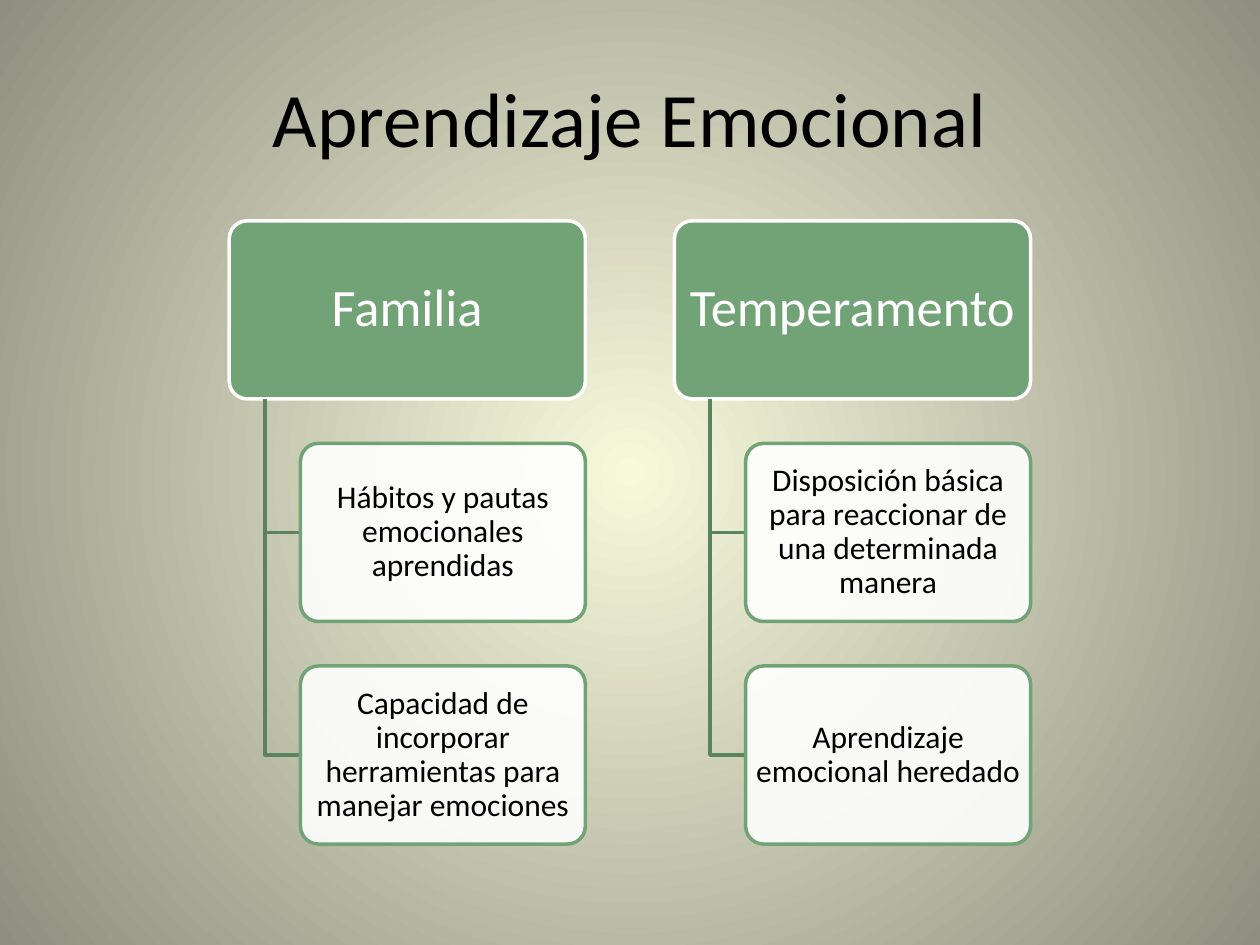
from dataclasses import dataclass

from lxml.etree import SubElement as Sub
from pptx import Presentation
from pptx.dml.color import RGBColor as RGB
from pptx.enum.shapes import MSO_SHAPE as Shape
from pptx.enum.text import MSO_ANCHOR as Anchor, PP_ALIGN as Align
from pptx.oxml.ns import qn
from pptx.util import Pt


@dataclass(frozen=True)
class Theme:
    font: str = "Calibri"
    title: int = 44
    head: int = 30
    body: int = 18
    line: int = 2
    ink: str = "000000"
    white: str = "FFFFFF"
    green: str = "72A376"
    dark: str = "5B835E"
    glow: str = "F7F9DB"
    edge: str = "8E8F80"


class Deck:
    def __init__(self, theme):
        self.theme = theme
        self.prs = Presentation()
        self.prs.slide_width, self.prs.slide_height = Pt(720), Pt(540)
        self.slide = self.prs.slides.add_slide(self.prs.slide_layouts[6])

    def glow(self):
        """Fill the background with a round gradient from the centre."""
        fill = self.slide.background.fill
        fill.gradient()
        tones = (self.theme.glow, self.theme.edge)
        for i, (stop, tone) in enumerate(zip(fill.gradient_stops, tones)):
            stop.position = i
            stop.color.rgb = RGB.from_string(tone)
        lin = self.slide.element.find(".//" + qn("a:lin"))
        grad = lin.getparent()
        grad.remove(lin)
        ring = Sub(grad, qn("a:path"), {"path": "circle"})
        Sub(ring, qn("a:fillToRect"), {side: "50000" for side in "ltrb"})

    def label(self, shape, text, size, color):
        """Set centred text in a shape."""
        frame = shape.text_frame
        frame.text = text
        frame.word_wrap = True
        frame.vertical_anchor = Anchor.MIDDLE
        par = frame.paragraphs[0]
        par.alignment = Align.CENTER
        font = par.runs[0].font
        font.name, font.size = self.theme.font, Pt(size)
        font.color.rgb = RGB.from_string(color)
        return frame

    def stroke(self, shape, color):
        shape.shadow.inherit = False
        shape.line.color.rgb = RGB.from_string(color)
        shape.line.width = Pt(self.theme.line)

    def title(self, text, x, y, w, h):
        box = self.slide.shapes.add_textbox(Pt(x), Pt(y), Pt(w), Pt(h))
        self.label(box, text, self.theme.title, self.theme.ink)

    def card(self, text, x, y, w, h, size, fill, line, ink, alpha=100):
        card = self.slide.shapes.add_shape(
            Shape.ROUNDED_RECTANGLE, Pt(x), Pt(y), Pt(w), Pt(h))
        card.adjustments[0] = 0.1
        card.fill.solid()
        card.fill.fore_color.rgb = RGB.from_string(fill)
        if alpha < 100:
            tone = card.element.spPr.find(".//" + qn("a:srgbClr"))
            Sub(tone, qn("a:alpha"), val=str(alpha * 1000))
        self.stroke(card, line)
        frame = self.label(card, text, size, ink)
        frame.margin_left = frame.margin_right = Pt(0.15 * size)
        frame.margin_top = frame.margin_bottom = Pt(0.1 * size)
        frame.paragraphs[0].line_spacing = 0.9

    def elbow(self, x, y, w, h):
        """Draw a line down, then right."""
        pen = self.slide.shapes.build_freeform(Pt(x), Pt(y))
        pen.add_line_segments(
            [(Pt(x), Pt(y + h)), (Pt(x + w), Pt(y + h))], close=False)
        bend = pen.convert_to_shape()
        bend.fill.background()
        self.stroke(bend, self.theme.dark)

    def branch(self, head, items, x, y, unit):
        """Draw a head card with its items hanging below it."""
        t = self.theme
        wide, high, step = 10 * unit, 5 * unit, 6.25 * unit
        self.card(head, x, y, wide, high, t.head, t.green, t.white, t.white)
        for row, item in enumerate(items, 1):
            top = y + row * step
            self.elbow(x + unit, y + high, unit, top - y - high / 2)
            self.card(item, x + 2 * unit, top, wide - 2 * unit, high,
                      t.body, t.white, t.green, t.ink, alpha=90)


BRANCHES = {
    "Familia": (
        "Hábitos y pautas emocionales aprendidas",
        "Capacidad de incorporar herramientas para manejar emociones",
    ),
    "Temperamento": (
        "Disposición básica para reaccionar de una determinada manera",
        "Aprendizaje emocional heredado",
    ),
}


def main():
    deck = Deck(Theme())
    deck.glow()
    deck.title("Aprendizaje Emocional", 36, 21.6, 648, 90)
    unit = 20.35
    for col, (head, items) in enumerate(BRANCHES.items()):
        deck.branch(head, items, 131 + col * 12.5 * unit, 126.2, unit)
    deck.prs.save("out.pptx")


if __name__ == "__main__":
    main()
